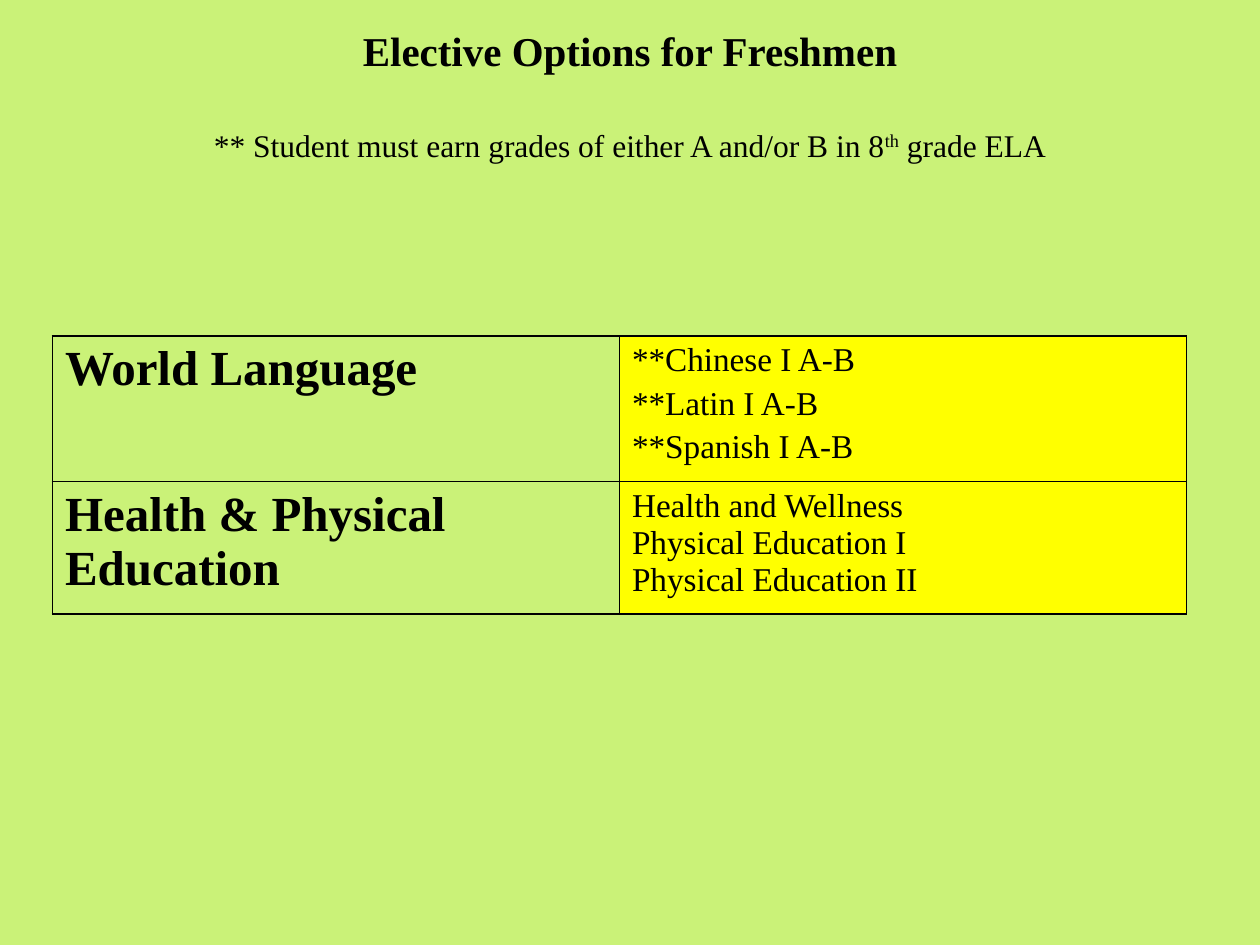
from lxml.etree import SubElement
from pptx import Presentation
from pptx.dml.color import RGBColor
from pptx.enum.text import MSO_ANCHOR as Anchor, PP_ALIGN as Align
from pptx.oxml.ns import qn
from pptx.util import Pt

FONT = "Times New Roman"
INK, LIME, YELLOW = "000000", "CAF278", "FFFF00"
ELECTIVES = [
    ("World Language",
     ["**Chinese I A-B", "**Latin I A-B", "**Spanish I A-B"], 78, 0.2),
    ("Health & Physical Education",
     ["Health and Wellness", "Physical Education I", "Physical Education II"], 70, 0),
]


def paint(fill, color):
    fill.solid()
    fill.fore_color.rgb = RGBColor.from_string(color)


def add_text(paragraph, text, size, bold=False, raised=False, align=None, before=None):
    run = paragraph.add_run()
    run.text = text
    font = run.font
    font.name, font.size, font.bold = FONT, Pt(size), bold
    font.color.rgb = RGBColor.from_string(INK)
    if raised:
        font._element.set("baseline", "30000")
    if align is not None:
        paragraph.alignment = align
    if before is not None:
        paragraph.space_before = Pt(before)


def add_heading(slide):
    heading = slide.shapes.add_textbox(Pt(36), Pt(21.6), Pt(648), Pt(90))
    frame = heading.text_frame
    frame.word_wrap = True
    frame.vertical_anchor = Anchor.MIDDLE
    frame.margin_top, frame.margin_bottom = Pt(0), Pt(25)
    add_text(frame.paragraphs[0], "Elective Options for Freshmen", 23.4,
             bold=True, align=Align.CENTER)
    requirement = frame.add_paragraph()
    add_text(requirement, "** Student must earn grades of either A and/or B in 8", 18,
             align=Align.CENTER, before=29)
    add_text(requirement, "th", 18, raised=True)
    add_text(requirement, " grade ELA", 18)


def add_borders(cell):
    """Draw a 1 pt line on each side; call before filling the cell."""
    properties = cell._tc.get_or_add_tcPr()
    for side in ("a:lnL", "a:lnR", "a:lnT", "a:lnB"):
        line = SubElement(properties, qn(side), w=str(Pt(1)))
        fill = SubElement(line, qn("a:solidFill"))
        SubElement(fill, qn("a:srgbClr"), val=INK)


def fill_cell(cell, lines, size, gap, bold=False, color=None):
    add_borders(cell)
    if color:
        paint(cell.fill, color)
    else:
        cell.fill.background()
    frame = cell.text_frame
    for index, line in enumerate(lines):
        paragraph = frame.add_paragraph() if index else frame.paragraphs[0]
        add_text(paragraph, line, size, bold=bold, before=round(size * gap, 1))


def add_electives(slide):
    height = sum(row_height for _, _, row_height, _ in ELECTIVES)
    table = slide.shapes.add_table(
        len(ELECTIVES), 2, Pt(30), Pt(192), Pt(648), Pt(height)).table
    table.first_row = table.horz_banding = False
    for row, (subject, courses, row_height, gap) in zip(table.rows, ELECTIVES):
        row.height = Pt(row_height)
        fill_cell(row.cells[0], [subject], 28, gap, bold=True)
        fill_cell(row.cells[1], courses, 19, gap, color=YELLOW)


def main():
    deck = Presentation()
    deck.slide_width, deck.slide_height = Pt(720), Pt(540)
    slide = deck.slides.add_slide(deck.slide_layouts[6])
    paint(slide.background.fill, LIME)
    add_heading(slide)
    add_electives(slide)
    deck.save("out.pptx")


if __name__ == "__main__":
    main()
